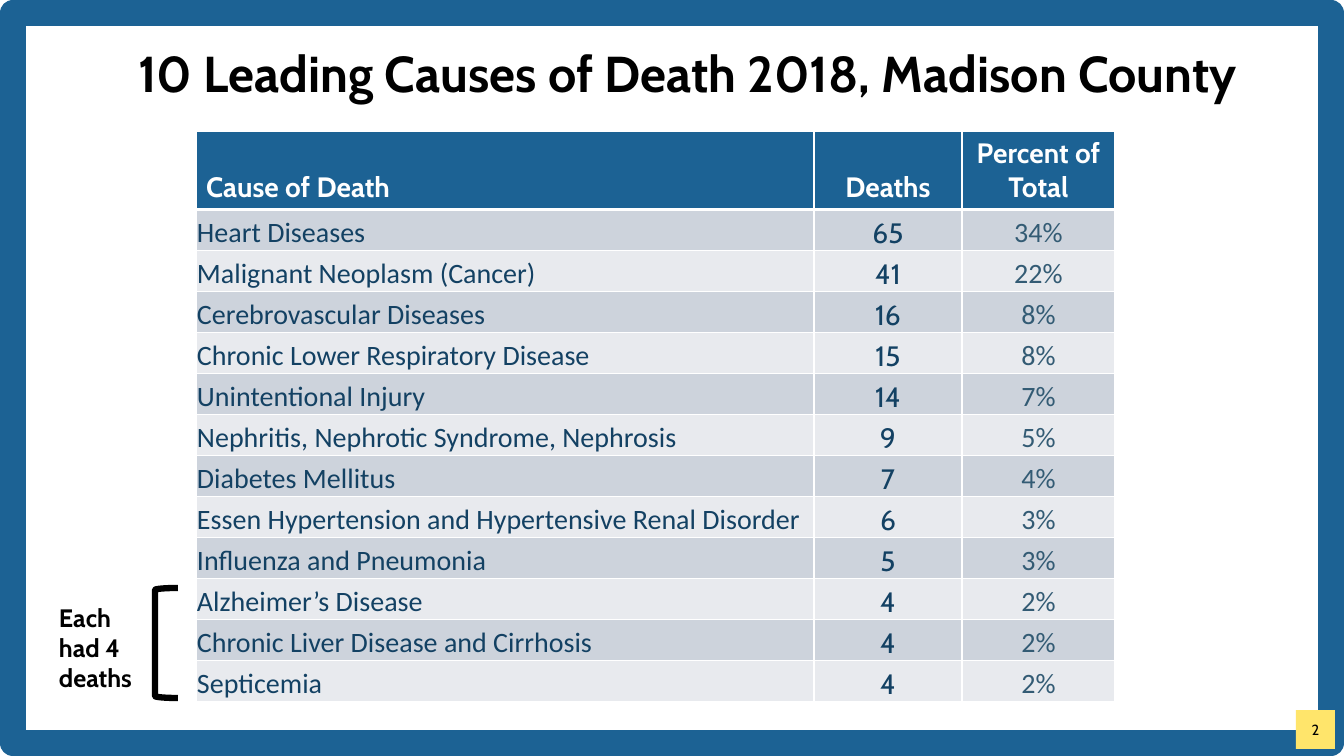
from lxml.etree import SubElement
from pptx import Presentation
from pptx.dml.color import RGBColor
from pptx.enum.shapes import MSO_SHAPE
from pptx.enum.text import MSO_ANCHOR, MSO_AUTO_SIZE, PP_ALIGN
from pptx.oxml.ns import qn
from pptx.util import Pt

EMU_PER_PX = 12192000 / 1344
BLUE, NAVY, SLATE = "1C6294", "134163", "335B74"
WHITE, BLACK, YELLOW = "FFFFFF", "000000", "FFE56B"
BANDS = ("CDD3DC", "E8EAEE")
HEADERS = ("Cause of Death", "Deaths", "Percent of Total")
CAUSES = (
    ("Heart Diseases", "65", "34%"),
    ("Malignant Neoplasm (Cancer)", "41", "22%"),
    ("Cerebrovascular Diseases", "16", "8%"),
    ("Chronic Lower Respiratory Disease", "15", "8%"),
    ("Unintentional Injury", "14", "7%"),
    ("Nephritis, Nephrotic Syndrome, Nephrosis", "9", "5%"),
    ("Diabetes Mellitus", "7", "4%"),
    ("Essen Hypertension and Hypertensive Renal Disorder", "6", "3%"),
    ("Influenza and Pneumonia", "5", "3%"),
    ("Alzheimer’s Disease", "4", "2%"),
    ("Chronic Liver Disease and Cirrhosis", "4", "2%"),
    ("Septicemia", "4", "2%"),
)
COLUMN_SHARES = (618, 148, 153)
BODY_STYLES = (("Calibri", NAVY), ("Cabin", NAVY), ("Calibri", SLATE))


def px(n):
    """Turn pixels into EMU."""
    return round(n * EMU_PER_PX)


def rgb(value):
    """Turn a hex string into a colour."""
    return RGBColor.from_string(value)


def write(tf, text, size=20, font="Cabin", color=BLACK, bold=False,
          align=PP_ALIGN.LEFT, spacing=None):
    """Write each line of text as a formatted paragraph."""
    for i, line in enumerate(text.split("\n")):
        p = tf.add_paragraph() if i else tf.paragraphs[0]
        p.alignment = align
        if spacing:
            p.line_spacing = spacing
        r = p.add_run()
        r.text = line
        r.font.size, r.font.name, r.font.bold = Pt(size), font, bold
        r.font.color.rgb = rgb(color)


def add_shape(s, kind, box, fill=None, line=None, width=1):
    """Add a flat preset shape."""
    sp = s.shapes.add_shape(kind, *map(px, box))
    sp.shadow.inherit = False
    if fill:
        sp.fill.solid()
        sp.fill.fore_color.rgb = rgb(fill)
    else:
        sp.fill.background()
    if line:
        sp.line.color.rgb = rgb(line)
        sp.line.width = Pt(width)
    else:
        sp.line.fill.background()
    return sp


def set_borders(cell, **widths):
    """Draw white borders of the given point widths on a cell."""
    tc_pr = cell._tc.get_or_add_tcPr()
    for side in "LRTB":
        ln = SubElement(tc_pr, qn(f"a:ln{side}"), w=str(Pt(widths.get(side, 1))))
        SubElement(SubElement(ln, qn("a:solidFill")), qn("a:srgbClr"), val=WHITE)


def add_frame(s, x, y, w, h):
    """Draw the slide border and the page number in its corner."""
    add_shape(s, MSO_SHAPE.RECTANGLE, (x + 13, y + 13, w - 26, h - 26), line=BLUE, width=19)
    sp = add_shape(s, MSO_SHAPE.RECTANGLE, (x + w - 48, y + h - 46, 39, 39), fill=YELLOW)
    tf = sp.text_frame
    tf.margin_left = tf.margin_right = 0
    tf.vertical_anchor = MSO_ANCHOR.MIDDLE
    write(tf, "2", size=10.5, align=PP_ALIGN.CENTER)


def add_title(s, x, y, w, h):
    """Place and format the slide title."""
    sp = s.shapes.title
    sp.left, sp.top, sp.width, sp.height = map(px, (x, y, w, h))
    tf = sp.text_frame
    tf.auto_size = MSO_AUTO_SIZE.NONE
    tf.vertical_anchor = MSO_ANCHOR.MIDDLE
    write(tf, "10 Leading Causes of Death 2018, Madison County",
          size=36, bold=True, spacing=0.9)


def add_causes(s, x, y, w, h, header_h=78):
    """Build the table of causes of death."""
    rows = (HEADERS,) + CAUSES
    tbl = s.shapes.add_table(len(rows), len(HEADERS), *map(px, (x, y, w, h))).table
    for column, share in zip(tbl.columns, COLUMN_SHARES):
        column.width = px(w * share / sum(COLUMN_SHARES))
    for i, values in enumerate(rows):
        tbl.rows[i].height = px((h - header_h) / len(CAUSES) if i else header_h)
        for j, text in enumerate(values):
            cell = tbl.cell(i, j)
            font, color = BODY_STYLES[j] if i else ("Cabin", WHITE)
            if i:
                cell.margin_left = cell.margin_right = cell.margin_top = px(1)
                cell.margin_bottom = 0
            cell.vertical_anchor = MSO_ANCHOR.BOTTOM
            set_borders(cell, T=3 if i == 1 else 1, B=1 if i else 3)
            cell.fill.solid()
            cell.fill.fore_color.rgb = rgb(BANDS[(i - 1) % 2] if i else BLUE)
            write(cell.text_frame, text, font=font, color=color, bold=i == 0,
                  align=PP_ALIGN.CENTER if j else PP_ALIGN.LEFT)


def add_tie_note(s, x, y, w, h):
    """Bracket the tied rows and label them."""
    add_shape(s, MSO_SHAPE.LEFT_BRACKET, (x + w - 23, y, 23, h), line=BLACK, width=4.5)
    tf = s.shapes.add_textbox(*map(px, (x, y + 9, w - 23, h - 8))).text_frame
    tf.word_wrap = True
    write(tf, "Each\nhad 4\ndeaths", size=18, bold=True)


def main():
    """Build and save the slide."""
    prs = Presentation()
    prs.slide_width, prs.slide_height = px(1344), px(756)
    s = prs.slides.add_slide(prs.slide_layouts[5])
    add_frame(s, 0, 0, 1344, 756)
    add_title(s, 128, 40, 1159, 73)
    add_causes(s, 196, 131, 919, 570)
    add_tie_note(s, 49, 588, 129, 110)
    prs.save("out.pptx")


if __name__ == "__main__":
    main()
